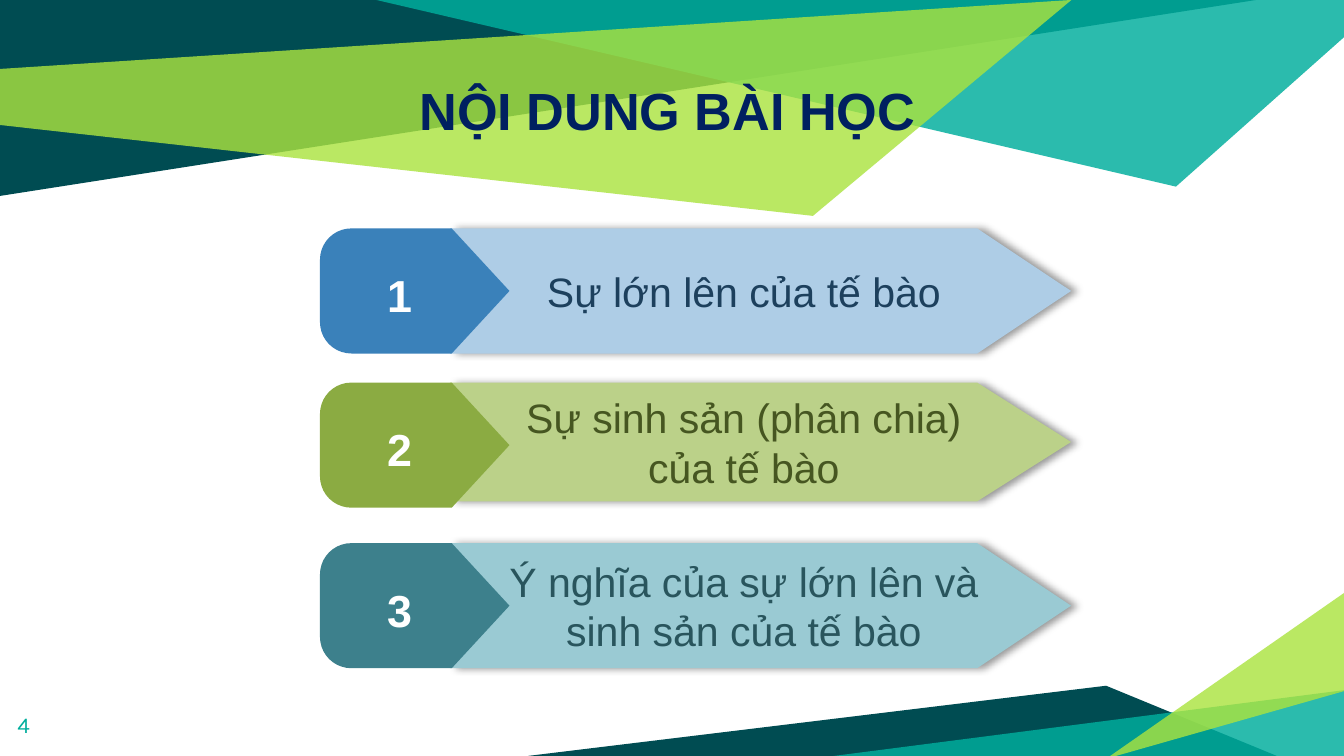
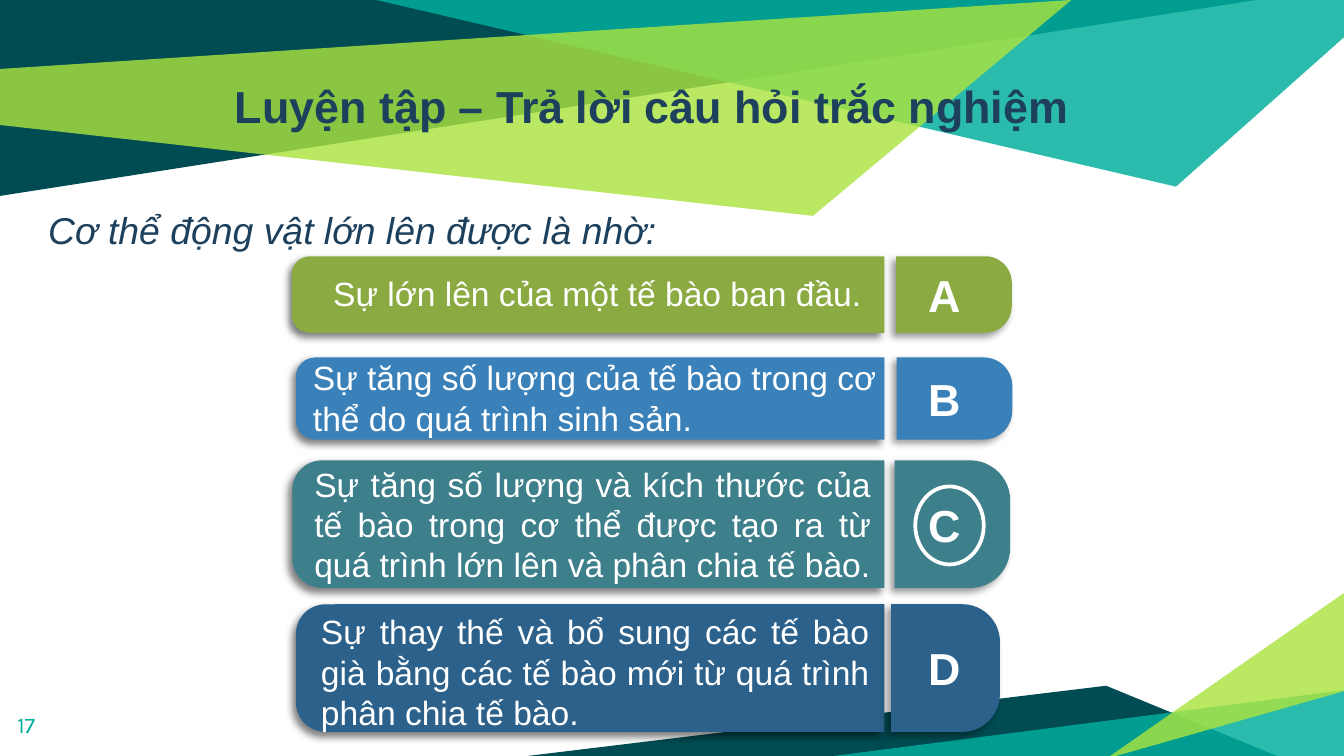
from dataclasses import dataclass

import math
import pptx
import pptx.dml.color
import pptx.enum.shapes
import pptx.enum.text
import pptx.oxml
import pptx.oxml.ns
import pptx.util

Pt = pptx.util.Pt
Align = pptx.enum.text.PP_ALIGN
Anchor = pptx.enum.text.MSO_ANCHOR
Preset = pptx.enum.shapes.MSO_SHAPE


@dataclass(frozen=True)
class Theme:
    dark: str = "004C52"
    teal: str = "00AE9D"
    lime: str = "ABE33F"
    navy: str = "002060"
    ink: str = "1D405D"
    white: str = "FFFFFF"
    blue: str = "3A81BA"
    green: str = "8BAB42"
    sea: str = "3D808C"
    deep: str = "2B618B"
    font: str = "Arial"
    number_font: str = "Karla"
    heading: int = 28
    large: int = 24
    topic: int = 22
    question: int = 20
    option: int = 18
    small: int = 12


THEME = Theme()

BANDS = [
    (THEME.dark, None, [(0, 0), (0, 105), (673, 0)]),
    (THEME.teal, 83, [(201.6, 0), (630, 100), (720, 20), (720, 0)]),
    (THEME.lime, 81, [(-0.5, 37), (0, 67), (435.5, 115.7), (574, 0)]),
    (THEME.dark, None, [(283, 405), (684, 405), (592.6, 367.4)]),
    (THEME.teal, 83, [(721.2, 369.6), (721.2, 406.5), (435, 406.5)]),
    (THEME.lime, 81, [(721, 370), (721, 317), (592.6, 406.5)]),
]

LESSON = {
    "title": "NỘI DUNG BÀI HỌC",
    "title_box": (-5, 31.7, 725, 67.7),
    "title_format": {"size": THEME.heading, "color": THEME.navy},
    "number": "4",
}
TOPICS = [
    ("Sự lớn lên của tế bào", 122.4, 67, THEME.blue, "AECDE6", THEME.ink),
    ("Sự sinh sản (phân chia) của tế bào", 205, 63.6, THEME.green, "BBD189", "465621"),
    ("Ý nghĩa của sự lớn lên và sinh sản của tế bào", 291, 67, THEME.sea, "9ACAD3", "29555D"),
]

PRACTICE = {
    "title": "Luyện tập – Trả lời câu hỏi trắc nghiệm",
    "title_box": (59, 32.4, 580.3, 37.4),
    "title_format": {"size": THEME.large, "color": THEME.ink},
    "number": "17",
}
QUESTION = "Cơ thể động vật lớn lên được là nhờ:"
OPTIONS = [
    ("A", "Sự lớn lên của một tế bào ban đầu.", THEME.green,
     (156.3, 137.3, 41), (480, 62), (171.4, 142.6, 335.5), Align.JUSTIFY),
    ("B", "Sự tăng số lượng của tế bào trong cơ thể do quá trình sinh sản.", THEME.blue,
     (158.5, 191.5, 44), (480.3, 62), (160.6, 187.9, 321), Align.LEFT),
    ("C", "Sự tăng số lượng và kích thước của tế bào trong cơ thể được tạo ra "
     "từ quá trình lớn lên và phân chia tế bào.", THEME.sea,
     (156.6, 246.6, 68.4), (479.2, 62), (161.3, 244.8, 312.5), Align.JUSTIFY),
    ("D", "Sự thay thế và bổ sung các tế bào già bằng các tế bào mới "
     "từ quá trình phân chia tế bào.", THEME.deep,
     (158.5, 323.7, 68.4), (477.4, 58.3), (164.9, 324, 308), Align.JUSTIFY),
]
BAR_RIGHT = 473.8


def rgb(value):
    return pptx.dml.color.RGBColor.from_string(value)


def child(parent, tag, **attributes):
    element = pptx.oxml.parse_xml(f"<{tag} {pptx.oxml.ns.nsdecls('a')}/>")
    for name, value in attributes.items():
        element.set(name, str(value))
    parent.append(element)
    return element


def paint(shape, color, opacity=None, shadow=None):
    shape.fill.solid()
    shape.fill.fore_color.rgb = rgb(color)
    shape.line.fill.background()
    shape.shadow.inherit = False
    properties = shape._element.spPr
    if opacity:
        fill_color = properties.find(".//" + pptx.oxml.ns.qn("a:srgbClr"))
        child(fill_color, "a:alpha", val=opacity * 1000)
    if shadow:
        alpha, direction = shadow
        effects = properties.find(pptx.oxml.ns.qn("a:effectLst"))
        outer = child(effects, "a:outerShdw", blurRad=Pt(4), dist=Pt(3),
                      dir=direction * 60000, algn="ctr", rotWithShape=0)
        child(child(outer, "a:srgbClr", val="000000"), "a:alpha", val=alpha * 1000)
    return shape


def write(shape, text, *, size, color, font=THEME.font, bold=False, italic=False,
          align=Align.LEFT, anchor=Anchor.TOP, insets=(7.2, 3.6), wrap=True,
          line_spacing=None, space_after=None):
    frame = shape.text_frame
    frame.text = text
    frame.word_wrap = wrap
    frame.auto_size = pptx.enum.text.MSO_AUTO_SIZE.NONE
    frame.vertical_anchor = anchor
    frame.margin_left = frame.margin_right = Pt(insets[0])
    frame.margin_top = frame.margin_bottom = Pt(insets[1])
    paragraph = frame.paragraphs[0]
    paragraph.alignment = align
    if line_spacing:
        paragraph.line_spacing = line_spacing
    if space_after:
        paragraph.space_after = Pt(space_after)
    style = paragraph.runs[0].font
    style.name, style.size = font, Pt(size)
    style.bold, style.italic = bold, italic
    style.color.rgb = rgb(color)


def text_box(slide, box, text, **style):
    write(slide.shapes.add_textbox(*map(Pt, box)), text, **style)


def outline(slide, points, color, **style):
    points = [(Pt(x), Pt(y)) for x, y in points]
    builder = slide.shapes.build_freeform(*points[0], scale=1.0)
    builder.add_line_segments(points[1:], close=True)
    return paint(builder.convert_to_shape(), color, **style)


def rounded_end(slide, box, angle, adjustment, color, alpha):
    left, top, width, height = box
    turned = (left + (width - height) / 2, top + (height - width) / 2, height, width)
    shape = slide.shapes.add_shape(Preset.ROUND_2_SAME_RECTANGLE, *map(Pt, turned))
    shape.rotation = angle
    shape.adjustments[0] = adjustment
    shape.adjustments[1] = 0
    paint(shape, color, shadow=(alpha, 135))


def arc(center_x, center_y, radius, start):
    angles = [math.radians(start + step * 9) for step in range(11)]
    return [(center_x + radius * math.cos(a), center_y + radius * math.sin(a))
            for a in angles]


def add_bands(slide, layout):
    for color, opacity, points in BANDS:
        band = outline(slide, points, color, opacity=opacity)
        layout.shapes.element.append(band._element)


def start_slide(presentation, layout, content):
    slide = presentation.slides.add_slide(layout)
    title = slide.shapes.title
    title.left, title.top, title.width, title.height = map(Pt, content["title_box"])
    write(title, content["title"], bold=True, align=Align.CENTER,
          insets=(7.2, 10), **content["title_format"])
    text_box(slide, (2.2, 373.7, 43.2, 31), content["number"], size=THEME.small,
             color=THEME.teal, font=THEME.number_font, insets=(7.2, 7.2))
    return slide


def add_badge(slide, text, left, width, middle):
    text_box(slide, (left, middle - 18, width, 36), text, size=THEME.large,
             color=THEME.white, bold=True, align=Align.CENTER,
             anchor=Anchor.MIDDLE, wrap=False)


def add_topic(slide, number, topic):
    text, top, height, tag_color, body_color, text_color = topic
    middle = top + height / 2
    outline(slide, [(241.2, top), (523.5, top), (573.8, middle),
                    (523.5, top + height), (241.2, top + height)],
            body_color, shadow=(40, 0))
    left, radius, bottom = 171.4, 16.8, top + 67
    corners = (arc(left + radius, bottom - radius, radius, 90)
               + arc(left + radius, top + radius, radius, 180))
    outline(slide, corners + [(242, top), (272.9, top + 33.5), (242, bottom)], tag_color)
    add_badge(slide, str(number), 200.2, 28, top + 35.5)
    text_box(slide, (265, middle - 30.2, 267, 60.4), text, size=THEME.topic,
             color=text_color, align=Align.CENTER, anchor=Anchor.MIDDLE)


def add_option(slide, option):
    letter, text, color, bar, tag, text_place, align = option
    left, top, height = bar
    rounded_end(slide, (left, top, BAR_RIGHT - left, height), 270, 0.233, color, 50)
    tag_left, tag_width = tag
    rounded_end(slide, (tag_left, top, tag_width, height), 90, 0.347, color, 40)
    add_badge(slide, letter, 490, 32, top + height / 2)
    text_left, text_top, text_width = text_place
    text_box(slide, (text_left, text_top, text_width, height + 6), text,
             size=THEME.option, color=THEME.white, align=align)


def main():
    presentation = pptx.Presentation()
    presentation.slide_width, presentation.slide_height = Pt(720), Pt(405)
    layout = presentation.slide_layouts.get_by_name("Title Only")

    lesson = start_slide(presentation, layout, LESSON)
    add_bands(lesson, layout)
    for number, topic in enumerate(TOPICS, 1):
        add_topic(lesson, number, topic)

    practice = start_slide(presentation, layout, PRACTICE)
    text_box(practice, (18.7, 103.7, 343.4, 33), QUESTION, size=THEME.question,
             color=THEME.ink, italic=True, wrap=False, line_spacing=1.15, space_after=10)
    for option in OPTIONS:
        add_option(practice, option)
    ring = practice.shapes.add_shape(Preset.OVAL, *map(Pt, (490.3, 260.6, 36.7, 41.8)))
    ring.fill.background()
    ring.line.color.rgb = rgb(THEME.white)
    ring.line.width = Pt(2)
    ring.shadow.inherit = False

    presentation.save("out.pptx")


if __name__ == "__main__":
    main()
